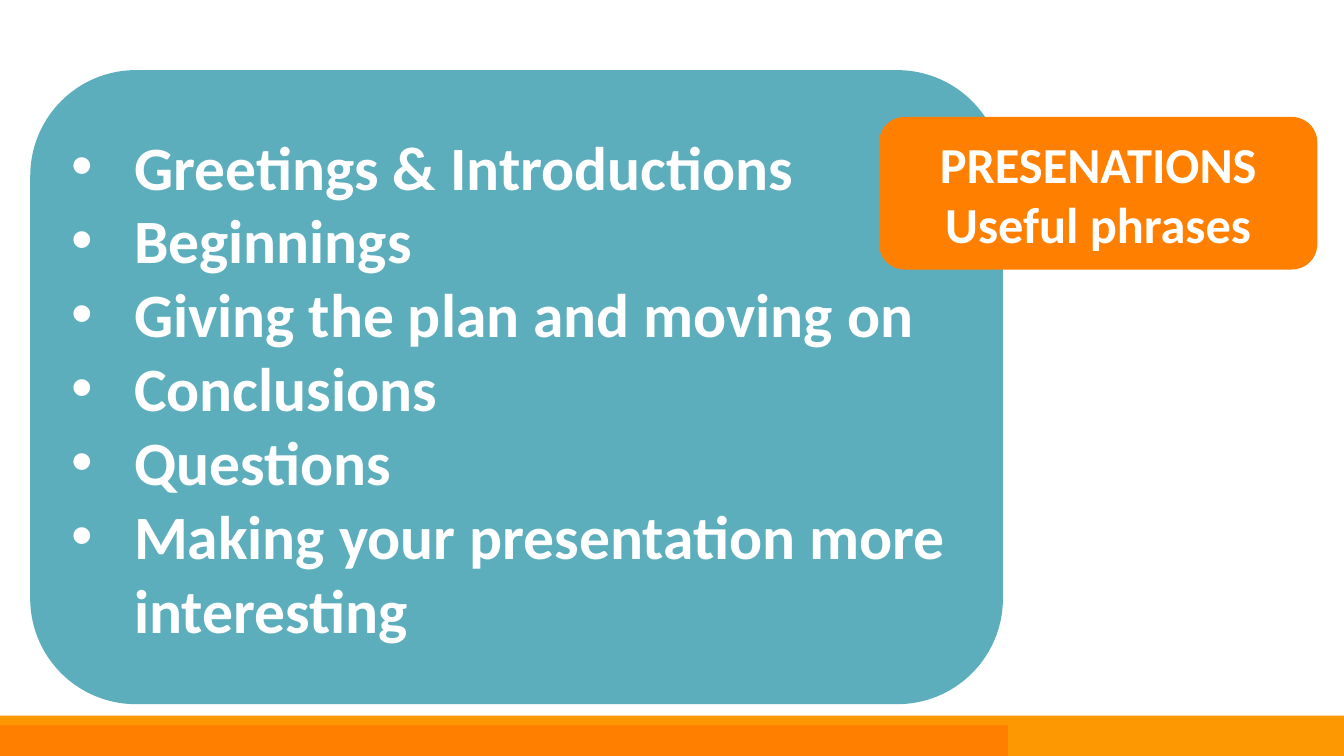
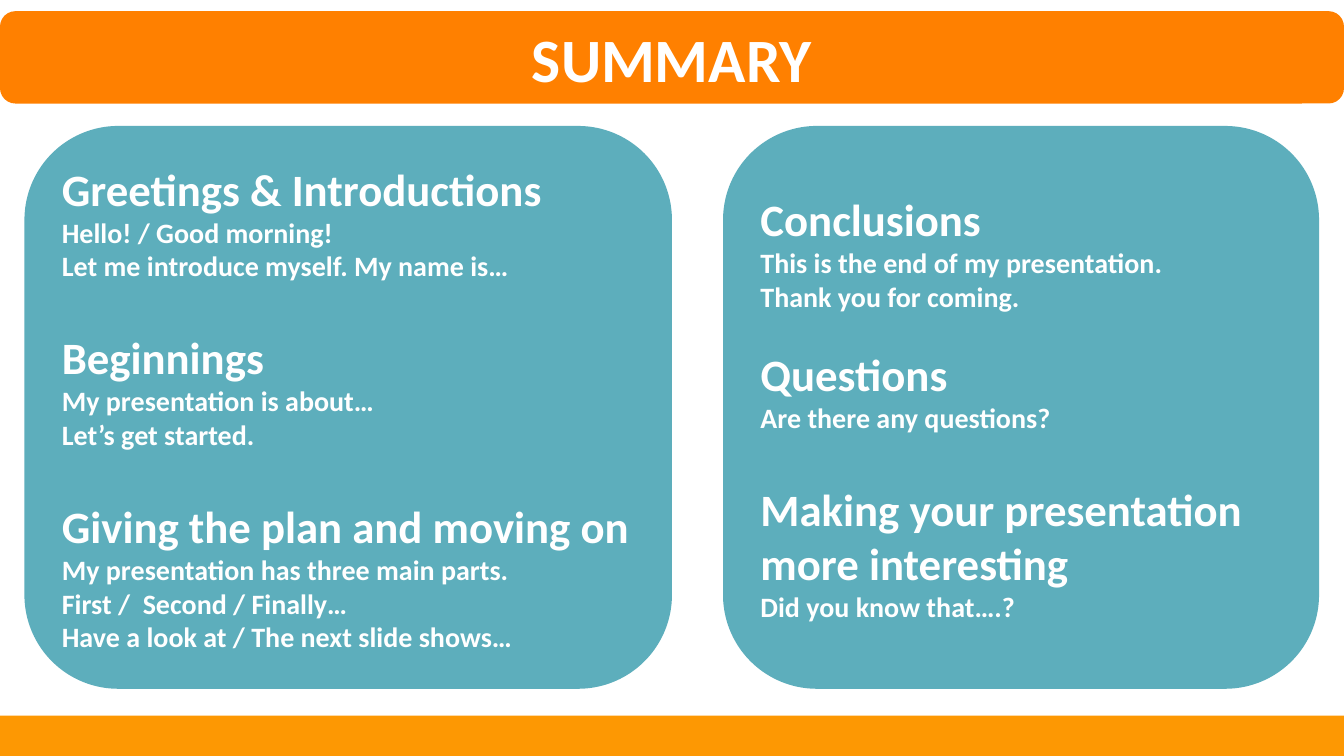
from lxml import etree
from pptx import Presentation
from pptx import util as u
from pptx.dml import color
from pptx.enum import shapes, text
from pptx.oxml import ns

COLORS = {"amber": "FD9803", "orange": "FF8000", "teal": "5DAEBC", "white": "FFFFFF"}
FONT = "Calibri"
WIDTH, HEIGHT = 960, 540
FOOTER_TOP = 511.2
TITLE_ONLY = 5
BULLET_INDENT = 45
RECTANGLE = shapes.MSO_SHAPE.RECTANGLE
ROUNDED = shapes.MSO_SHAPE.ROUNDED_RECTANGLE

TOPICS = [
    "Greetings & Introductions",
    "Beginnings",
    "Giving the plan and moving on",
    "Conclusions",
    "Questions",
    "Making your presentation more interesting",
]

# Each section: heading, gap above it, phrases
OPENING_SECTIONS = [
    (TOPICS[0], 0, ["Hello! / Good morning!", "Let me introduce myself. My name is…"]),
    (TOPICS[1], 34, ["My presentation is about…", "Let’s get started."]),
    (TOPICS[2], 34, ["My presentation has three main parts.",
                     "First /  Second / Finally…",
                     "Have a look at / The next slide shows…"]),
]
CLOSING_SECTIONS = [
    (TOPICS[3], 0, ["This is the end of my presentation.", "Thank you for coming."]),
    (TOPICS[4], 24.4, ["Are there any questions?"]),
    (TOPICS[5], 34, ["Did you know that….?"]),
]


def add_block(slide, kind, box, fill):
    shape = slide.shapes.add_shape(kind, *map(u.Pt, box))
    shape.shadow.inherit = False
    shape.fill.solid()
    shape.fill.fore_color.rgb = color.RGBColor.from_string(COLORS[fill])
    shape.line.fill.background()
    return shape


def write_lines(shape, lines, alignment):
    """Write (text, size, gap above) lines, centred vertically."""
    frame = shape.text_frame
    frame.text = "\n".join(line[0] for line in lines)
    frame.word_wrap = True
    frame.auto_size = text.MSO_AUTO_SIZE.NONE
    frame.vertical_anchor = text.MSO_ANCHOR.MIDDLE
    for paragraph, (_, size, gap) in zip(frame.paragraphs, lines):
        paragraph.alignment = alignment
        paragraph.space_before = u.Pt(gap)
        for run in paragraph.runs:
            run.font.name = FONT
            run.font.size = u.Pt(size)
            run.font.bold = True
            run.font.color.rgb = color.RGBColor.from_string(COLORS["white"])


def add_bullets(shape):
    for paragraph in shape.text_frame.paragraphs:
        properties = paragraph._p.get_or_add_pPr()
        properties.set("marL", str(u.Pt(BULLET_INDENT)))
        properties.set("indent", str(-u.Pt(BULLET_INDENT)))
        etree.SubElement(properties, ns.qn("a:buFont"), typeface="Arial")
        etree.SubElement(properties, ns.qn("a:buChar"), char="•")


def add_title(slide, box, lines, size):
    """Place the title on an orange plate, in front of everything so far."""
    add_block(slide, ROUNDED, box, "orange")
    title = slide.shapes.title
    title.left, title.top, title.width, title.height = map(u.Pt, box)
    write_lines(title, [(line, size, 0) for line in lines], text.PP_ALIGN.CENTER)
    slide.shapes._spTree.append(title._element)


def add_card(slide, box, lines):
    card = add_block(slide, ROUNDED, box, "teal")
    write_lines(card, lines, text.PP_ALIGN.LEFT)
    return card


def section_lines(sections):
    lines = []
    for heading, gap, phrases in sections:
        lines.append((heading, 32, gap))
        lines += [(phrase, 20, 0) for phrase in phrases]
    return lines


def add_slide(presentation):
    slide = presentation.slides.add_slide(presentation.slide_layouts[TITLE_ONLY])
    add_block(slide, RECTANGLE, (0, FOOTER_TOP, WIDTH, HEIGHT - FOOTER_TOP), "amber")
    return slide


def build_topics(presentation):
    slide = add_slide(presentation)
    # Darker part of the footer
    add_block(slide, RECTANGLE, (0, 517.7, 720, HEIGHT - 517.7), "orange")
    card = add_card(slide, (21.6, 50.1, 694.8, 452.9),
                    [(topic, 44, 0) for topic in TOPICS])
    add_bullets(card)
    add_title(slide, (628, 83.5, 313, 109), ["PRESENATIONS", "Useful phrases"], 36)


def build_summary(presentation):
    slide = add_slide(presentation)
    add_title(slide, (0, 8, WIDTH, 66), ["SUMMARY"], 44)
    for left, width, sections in ((17.5, 462.5, OPENING_SECTIONS),
                                  (516.5, 425.7, CLOSING_SECTIONS)):
        add_card(slide, (left, 90, width, 402), section_lines(sections))


def main():
    presentation = Presentation()
    presentation.slide_width, presentation.slide_height = u.Pt(WIDTH), u.Pt(HEIGHT)
    build_topics(presentation)
    build_summary(presentation)
    presentation.save("out.pptx")


if __name__ == "__main__":
    main()
